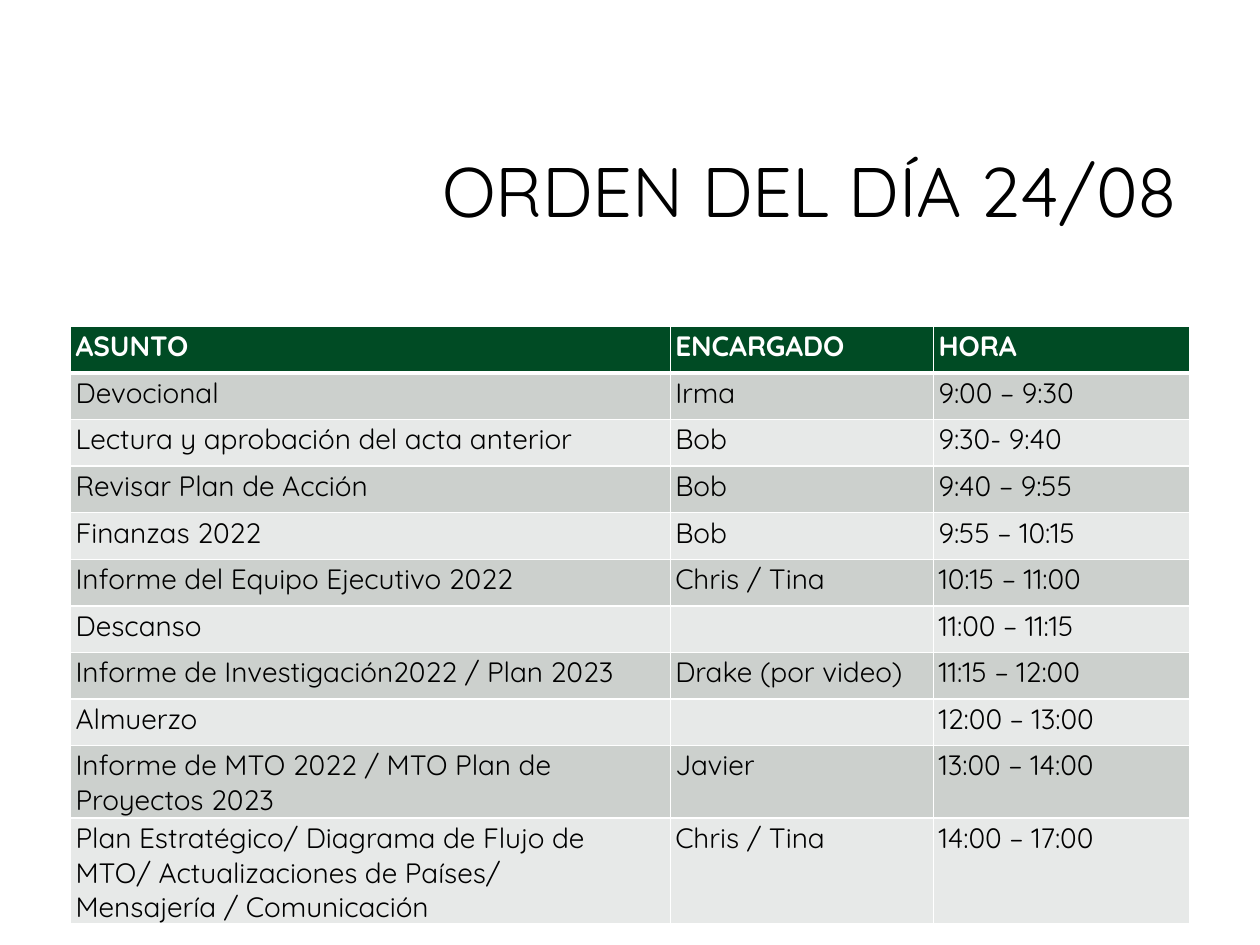
from lxml import etree
from pptx import Presentation
from pptx.dml.color import RGBColor
from pptx.enum.text import MSO_ANCHOR, PP_ALIGN
from pptx.oxml.ns import qn
from pptx.util import Inches, Pt

RIGHT = PP_ALIGN.RIGHT
MIDDLE = MSO_ANCHOR.MIDDLE
BLACK = RGBColor(0x00, 0x00, 0x00)
WHITE = RGBColor(0xFF, 0xFF, 0xFF)
GREEN = RGBColor(0x00, 0x4B, 0x24)
DARK_BAND = RGBColor(0xCC, 0xD0, 0xCD)
LIGHT_BAND = RGBColor(0xE7, 0xE9, 0xE8)
FONT = "Quicksand"

AGENDA = [
    ("ASUNTO", "ENCARGADO", "HORA"),
    ("Devocional", "Irma", "9:00 – 9:30"),
    ("Lectura y aprobación del acta anterior", "Bob", "9:30- 9:40"),
    ("Revisar Plan de Acción", "Bob", "9:40 – 9:55"),
    ("Finanzas 2022", "Bob", "9:55 – 10:15"),
    ("Informe del Equipo Ejecutivo 2022", "Chris / Tina", "10:15 – 11:00"),
    ("Descanso", "", "11:00 – 11:15"),
    ("Informe de Investigación2022 / Plan 2023", "Drake (por video)", "11:15 – 12:00"),
    ("Almuerzo", "", "12:00 – 13:00"),
    ("Informe de MTO 2022 / MTO Plan de Proyectos 2023", "Javier", "13:00 – 14:00"),
    (
        "Plan Estratégico/ Diagrama de Flujo de MTO/ Actualizaciones de Países/ "
        "Mensajería / Comunicación",
        "Chris / Tina",
        "14:00 – 17:00",
    ),
]
COLUMN_WIDTHS = [4.76, 2.09, 2.03]
ROW_HEIGHTS = [0.37] * 10 + [0.63]
CELL_MARGINS = {
    "margin_left": Inches(0.04),
    "margin_right": Inches(0.04),
    "margin_top": Inches(0.02),
    "margin_bottom": Inches(0.02),
}


def write(paragraph, text, size, color, bold=False):
    run = paragraph.add_run()
    run.text = text
    font_format = {"name": FONT, "size": Pt(size), "bold": bold}
    for attribute, value in font_format.items():
        setattr(run.font, attribute, value)
    run.font.color.rgb = color


def add_borders(cell, widths):
    properties = cell._tc.get_or_add_tcPr()
    for position, (side, width) in enumerate(widths.items()):
        border = etree.Element(qn(f"a:ln{side}"), w=str(Pt(width)))
        fill = etree.SubElement(border, qn("a:solidFill"))
        etree.SubElement(fill, qn("a:srgbClr"), val=str(WHITE))
        properties.insert(position, border)


prs = Presentation()
prs.slide_width = Inches(10)
prs.slide_height = Inches(7.5)
slide = prs.slides.add_slide(prs.slide_layouts[6])

heading = slide.shapes.add_textbox(
    Inches(2.38), Inches(0.84), Inches(7.06), Inches(1.41)
).text_frame
heading.word_wrap = True
heading.vertical_anchor = MIDDLE
heading_line = heading.paragraphs[0]
heading_line.alignment = RIGHT
heading_line.line_spacing = 0.9
write(heading_line, "ORDEN DEL DÍA 24/08", 40, BLACK)

agenda = slide.shapes.add_table(
    len(AGENDA), len(COLUMN_WIDTHS),
    Inches(0.56), Inches(2.59), Inches(sum(COLUMN_WIDTHS)), Inches(sum(ROW_HEIGHTS)),
).table
agenda.horz_banding = False
for column, width in zip(agenda.columns, COLUMN_WIDTHS):
    column.width = Inches(width)

for index, (entry, height) in enumerate(zip(AGENDA, ROW_HEIGHTS)):
    agenda.rows[index].height = Inches(height)
    is_header = index == 0
    band = GREEN if is_header else DARK_BAND if index % 2 else LIGHT_BAND
    borders = {"L": 1, "R": 1, "T": 3 if index == 1 else 1, "B": 3 if is_header else 1}
    for cell, text in zip(agenda.rows[index].cells, entry):
        for attribute, value in CELL_MARGINS.items():
            setattr(cell, attribute, value)
        cell.fill.solid()
        cell.fill.fore_color.rgb = band
        add_borders(cell, borders)
        if text:
            write(cell.text_frame.paragraphs[0], text, 16,
                  WHITE if is_header else BLACK, is_header)

prs.save("out.pptx")
